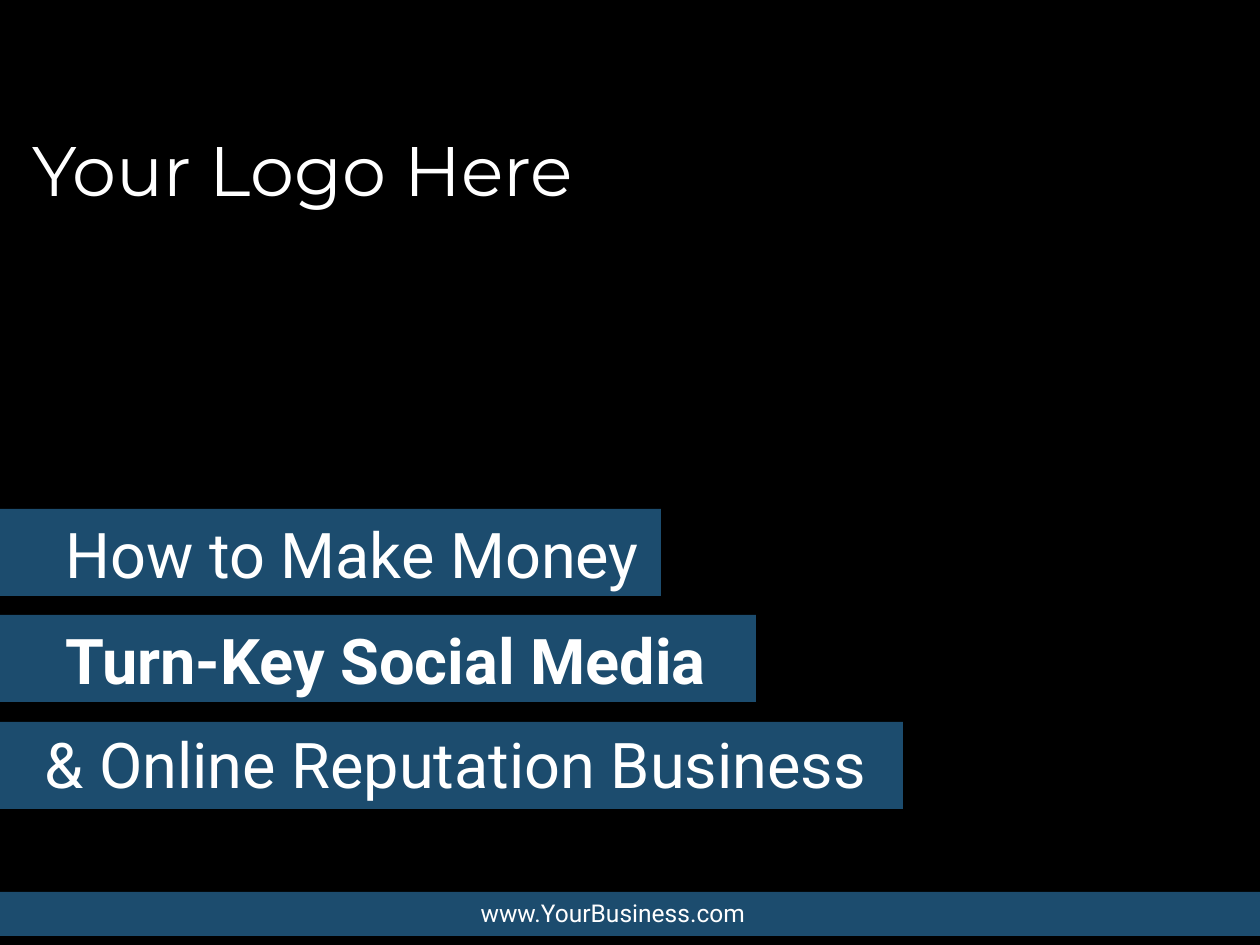
from dataclasses import dataclass

from pptx import Presentation
from pptx.dml.color import RGBColor
from pptx.enum import shapes, text
from pptx.util import Emu, Pt

PX = 914400 // 126  # EMU in one px
BLUE, WHITE, BLACK = "1C4C6E", "FFFFFF", "000000"


@dataclass
class Bar:
    top: int
    width: int
    height: int = 87


@dataclass
class Label:
    words: str
    left: int
    top: int
    width: int
    height: int = 89
    size: int = 36
    face: str = "Roboto"
    bold: bool = False
    wrap: bool = True
    center: bool = False


BARS = [
    Bar(892, 1260, 44),
    Bar(722, 903),
    Bar(615, 756),
    Bar(509, 661),
]

LABELS = [
    Label("How to Make Money", 53, 509, 627),
    Label("Turn-Key Social Media", 53, 615, 851, bold=True),
    Label("& Online Reputation Business", 32, 719, 872),
    Label("www.YourBusiness.com", 467, 892, 292, 43, size=14,
          wrap=False, center=True),
    Label("Your Logo Here", 20, 120, 621, 97, size=40,
          face="Montserrat", wrap=False),
]


def px(*sizes: int) -> list[Emu]:
    return [Emu(size * PX) for size in sizes]


def paint(fill, color: str) -> None:
    fill.solid()
    fill.fore_color.rgb = RGBColor.from_string(color)


def draw_bar(slide, bar: Bar) -> None:
    shape = slide.shapes.add_shape(
        shapes.MSO_SHAPE.RECTANGLE, *px(0, bar.top, bar.width, bar.height))
    shape.shadow.inherit = False
    paint(shape.fill, BLUE)
    shape.line.fill.background()


def draw_label(slide, label: Label) -> None:
    box = slide.shapes.add_textbox(
        *px(label.left, label.top, label.width, label.height))
    frame = box.text_frame
    frame.text = label.words
    frame.word_wrap = label.wrap
    frame.auto_size = text.MSO_AUTO_SIZE.SHAPE_TO_FIT_TEXT
    line = frame.paragraphs[0]
    if label.center:
        line.alignment = text.PP_ALIGN.CENTER
    font = line.runs[0].font
    font.name, font.size, font.bold = label.face, Pt(label.size), label.bold
    paint(font.fill, WHITE)


def main() -> None:
    deck = Presentation()
    deck.slide_width, deck.slide_height = px(1260, 945)
    slide = deck.slides.add_slide(deck.slide_layouts[6])
    paint(slide.background.fill, BLACK)

    # Title and footer bars
    for bar in BARS:
        draw_bar(slide, bar)

    # Title lines, web address and logo text
    for label in LABELS:
        draw_label(slide, label)

    deck.save("out.pptx")


if __name__ == "__main__":
    main()
